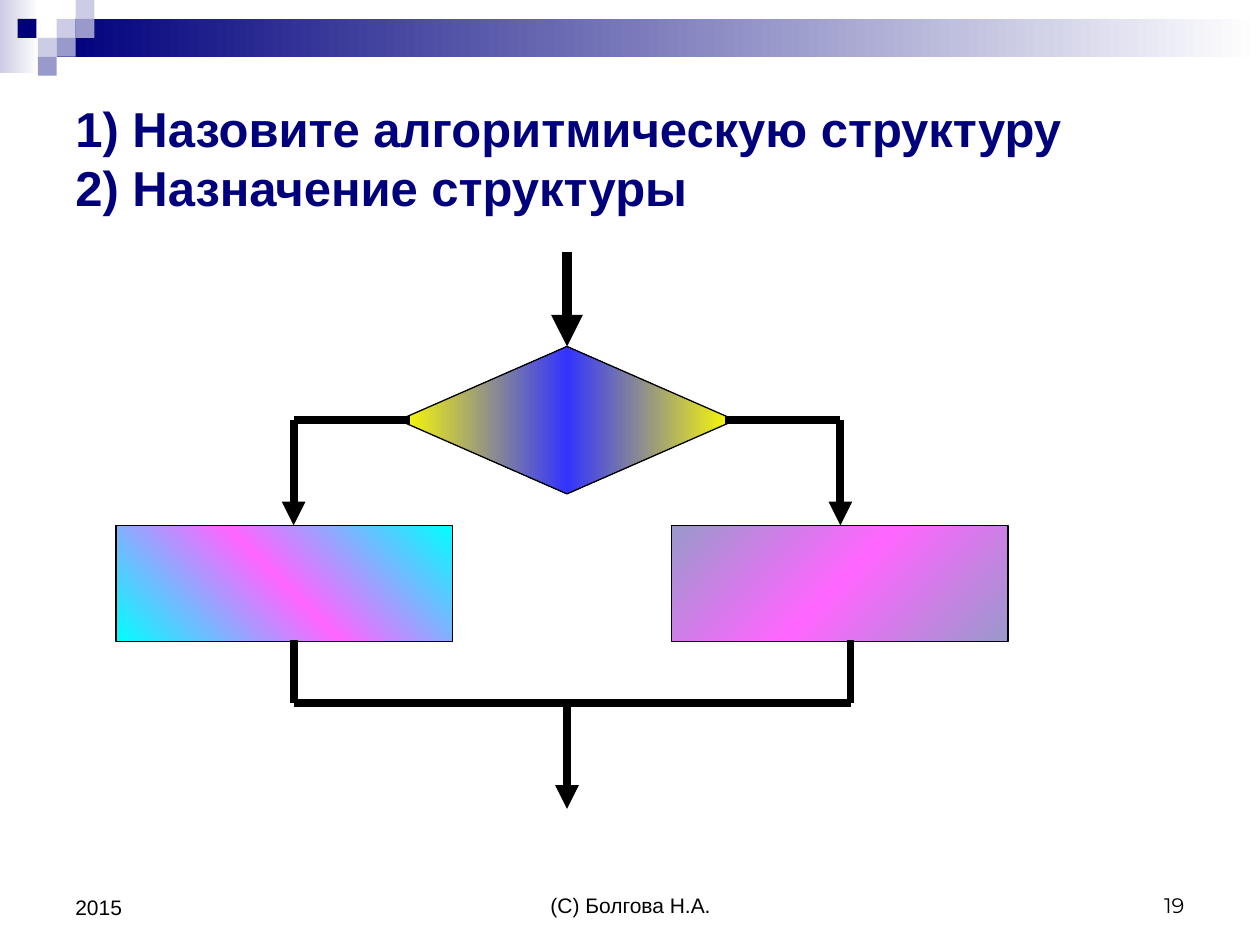
from copy import deepcopy

from pptx import Presentation
from pptx import util as u
from pptx.dml.color import RGBColor
from pptx.enum import shapes, text
from pptx.oxml.ns import qn
from pptx.oxml.xmlchemy import OxmlElement

NAVY, LILAC, PALE, WHITE, BLACK = "00007D", "9999CC", "CCCCE6", "FFFFFF", "000000"
YELLOW, BLUE, CYAN, PINK = "FFFF00", "3333FF", "00FFFF", "FF66FF"
RECTANGLE, DIAMOND = shapes.MSO_SHAPE.RECTANGLE, shapes.MSO_SHAPE.DIAMOND
ALIGN, ANCHOR = text.PP_ALIGN, text.MSO_ANCHOR


def color(hex_string):
    return RGBColor.from_string(hex_string)


def add_text(slide, box, words, size=12, font="Arial", ink=BLACK, bold=False,
             align=ALIGN.LEFT, anchor=ANCHOR.BOTTOM):
    frame = slide.shapes.add_textbox(*map(u.Inches, box)).text_frame
    frame.word_wrap = True
    frame.vertical_anchor = anchor
    paragraph = frame.paragraphs[0]
    paragraph.text = words
    paragraph.alignment = align
    for run in paragraph.runs:
        run.font.name, run.font.size, run.font.bold = font, u.Pt(size), bold
        run.font.color.rgb = color(ink)


def fill_gradient(shape, colors, angle):
    """Evenly spaced stops; the angle runs counter-clockwise."""
    shape.fill.gradient()
    shape.fill.gradient_angle = angle
    stop_list = shape._element.spPr.find(".//" + qn("a:gsLst"))
    while len(stop_list) < len(colors):
        stop_list.append(deepcopy(stop_list[0]))
    for index, stop in enumerate(shape.fill.gradient_stops):
        stop.position = index / (len(colors) - 1)
        stop.color.rgb = color(colors[index])


def add_block(slide, kind, box, colors, angle=0, outline=None):
    shape = slide.shapes.add_shape(kind, *map(u.Inches, box))
    shape.shadow.inherit = False
    if len(colors) == 1:
        shape.fill.solid()
        shape.fill.fore_color.rgb = color(colors[0])
    else:
        fill_gradient(shape, colors, angle)
    if outline:
        shape.line.color.rgb = color(outline)
        shape.line.width = u.Pt(0.75)
    else:
        shape.line.fill.background()


def add_line(slide, start, end, width=4.5, arrow=False):
    line = slide.shapes.add_connector(shapes.MSO_CONNECTOR.STRAIGHT,
                                      *map(u.Inches, (*start, *end)))
    line.line.color.rgb = color(BLACK)
    line.line.width = u.Pt(width)
    if arrow:
        tail = OxmlElement("a:tailEnd")
        tail.set("type", "triangle")
        line.line._get_or_add_ln().append(tail)
    line._element.spPr.append(OxmlElement("a:effectLst"))


def add_banner(slide, left, top, width):
    cell = 0.15
    add_block(slide, RECTANGLE, (left, top, 0.31, 0.58), (PALE, WHITE))
    add_block(slide, RECTANGLE, (left + 3 * cell, top + cell, width - 3 * cell, 2 * cell),
              (NAVY, WHITE))
    # Checkered squares: column, row, colour
    for column, row, tint in ((3, 1, PALE), (4, 0, PALE), (4, 1, LILAC), (2, 2, PALE),
                              (0.93, 1, NAVY), (3, 2, LILAC), (2, 3, LILAC)):
        add_block(slide, RECTANGLE,
                  (left + column * cell, top + row * cell, cell, cell), (tint,))


def add_footer(slide, left, top, width):
    add_text(slide, (left + 2.92, top, 3.17, 0.5), "(С) Болгова Н.А.", align=ALIGN.CENTER)
    add_text(slide, (left + width - 2.33, top, 2.33, 0.5), "19", font="Montserrat",
             align=ALIGN.RIGHT)
    add_text(slide, (left, top, 2.33, 0.52), "2015")


def add_flowchart(slide, left, top):
    block_width, block_height = 2.67, 0.92
    center = left + 3.58
    left_branch, right_branch, right_exit = left + 1.41, left + 5.75, left + 5.83
    decision_top, branch_y = top + 0.75, top + 1.33
    block_top, join_y = top + 2.17, top + 3.58
    block_bottom = block_top + block_height - 0.01

    # Entry and decision
    add_line(slide, (center, top), (center, decision_top), width=6, arrow=True)
    add_block(slide, DIAMOND, (center - block_width / 2, decision_top, block_width, 1.17),
              (YELLOW, BLUE, YELLOW), outline=BLACK)

    # Branches down to the two action blocks
    for branch, side in ((left_branch, center - 1.25), (right_branch, center + 1.25)):
        add_line(slide, (side, branch_y), (branch, branch_y))
        add_line(slide, (branch, branch_y), (branch, block_top), arrow=True)
    for block_left, edge, angle in ((left, CYAN, 45), (left + 4.41, LILAC, 315)):
        add_block(slide, RECTANGLE, (block_left, block_top, block_width, block_height),
                  (edge, PINK, edge), angle, outline=BLACK)

    # Branches join and leave
    for branch in (left_branch, right_exit):
        add_line(slide, (branch, block_bottom), (branch, join_y))
    add_line(slide, (left_branch, join_y), (right_exit, join_y))
    add_line(slide, (center, join_y), (center, join_y + 0.84), arrow=True)


def main():
    presentation = Presentation()
    presentation.slide_width, presentation.slide_height = u.Inches(10), u.Inches(7.5)
    slide = presentation.slides.add_slide(presentation.slide_layouts[6])
    add_banner(slide, 0, 0, 10)
    add_footer(slide, 0.5, 6.83, 9)
    add_text(slide, (0.5, 0.5, 9, 1.5),
             "1) Назовите алгоритмическую структуру\n2) Назначение структуры",
             size=28, ink=NAVY, bold=True, anchor=ANCHOR.MIDDLE)
    add_flowchart(slide, 0.92, 2)
    presentation.save("out.pptx")


if __name__ == "__main__":
    main()
